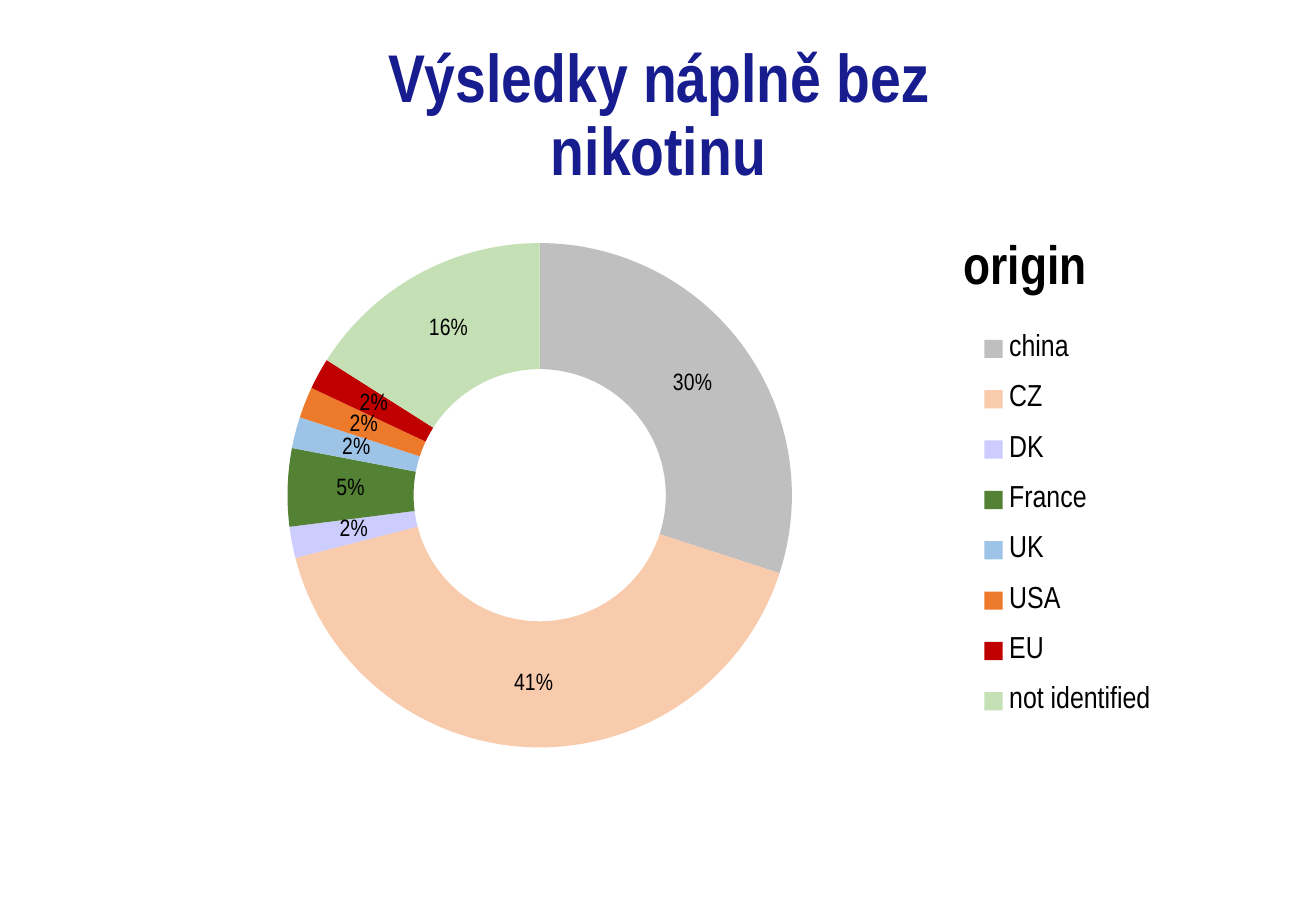
from lxml import etree
from pptx import Presentation
from pptx.chart.data import CategoryChartData
from pptx.dml.color import RGBColor
from pptx.enum.chart import XL_CHART_TYPE, XL_LEGEND_POSITION
from pptx.enum.text import MSO_ANCHOR, PP_ALIGN
from pptx.oxml.ns import qn
from pptx.util import Pt

# Content: origin, share in percent, slice colour
TITLE = "Výsledky náplně bez nikotinu"
NAME = "origin"
SLICES = [
    ("china", 30, "BFBFBF"),
    ("CZ", 41, "F8CBAD"),
    ("DK", 2, "CCCCFF"),
    ("France", 5, "548235"),
    ("UK", 2, "9DC3E6"),
    ("USA", 2, "ED7A2B"),
    ("EU", 2, "C00000"),
    ("not identified", 16, "C5E0B4"),
]
COLORS = {"title": "171C8F", "text": "000000"}
FACE = "Arial Narrow"

# Lengths in px, 120 to the inch
PX = 7620
SIZE = (1300, 900)
HEAD = (324, 29, 653, 174)
CHART = (193, 215, 979, 568)


def emu(box):
    return [n * PX for n in box]


def style(font, size, color="text", bold=False, face=FACE):
    font.name, font.size, font.bold = face, Pt(size), bold
    font.color.rgb = RGBColor.from_string(COLORS[color])


def place(part, inner=False, **frac):
    """Fix a chart part at fractions of the chart area."""
    for old in part.findall(qn("c:layout")):
        part.remove(old)
    layout = etree.Element(qn("c:layout"))
    manual = etree.SubElement(layout, qn("c:manualLayout"))
    rows = [("layoutTarget", "inner")] if inner else []
    rows += [(key + "Mode", "edge") for key in "xy"]
    rows += frac.items()
    for tag, val in rows:
        etree.SubElement(manual, qn("c:" + tag)).set("val", str(val))
    over = part.find(qn("c:overlay"))
    part.insert(0 if over is None else part.index(over), layout)


deck = Presentation()
deck.slide_width, deck.slide_height = emu(SIZE)
slide = deck.slides.add_slide(deck.slide_layouts[5])

# Slide title
head = slide.shapes.title
head.left, head.top, head.width, head.height = emu(HEAD)
frame = head.text_frame
frame.text = TITLE
frame.word_wrap = True
frame.vertical_anchor = MSO_ANCHOR.MIDDLE
para = frame.paragraphs[0]
para.alignment = PP_ALIGN.CENTER
para.line_spacing = 0.9
style(para.font, 40, "title", True)

# Doughnut chart
data = CategoryChartData()
data.categories = [name for name, _, _ in SLICES]
data.add_series(NAME, [val for _, val, _ in SLICES])
chart = slide.shapes.add_chart(XL_CHART_TYPE.DOUGHNUT, *emu(CHART), data).chart
style(chart.font, 10, face="Calibri")
plot = chart.plots[0]
plot.vary_by_categories = True
ring = plot.series[0]
for i, (_, _, color) in enumerate(SLICES):
    part = ring.points[i].format
    part.fill.solid()
    part.fill.fore_color.rgb = RGBColor.from_string(color)
    part.line.fill.background()

# Percent labels
labels = ring.data_labels
labels.show_percentage = True
labels.show_value = False
labels.number_format = "0%"
labels.number_format_is_linked = False
style(labels.font, 14)

# Chart title and legend
chart.has_title = True
text = chart.chart_title.text_frame
text.text = NAME
style(text.paragraphs[0].font, 32, bold=True)
chart.has_legend = True
legend = chart.legend
legend.position = XL_LEGEND_POSITION.RIGHT
legend.include_in_layout = False
style(legend.font, 18)

# Places inside the chart
area = chart._chartSpace.find(".//" + qn("c:plotArea"))
place(area, True, x=0.093, y=0.044, w=0.509, h=0.878)
place(chart.chart_title._element, x=0.765, y=0.02)
place(legend._element, x=0.78, y=0.165, w=0.2, h=0.74)

deck.save("out.pptx")
